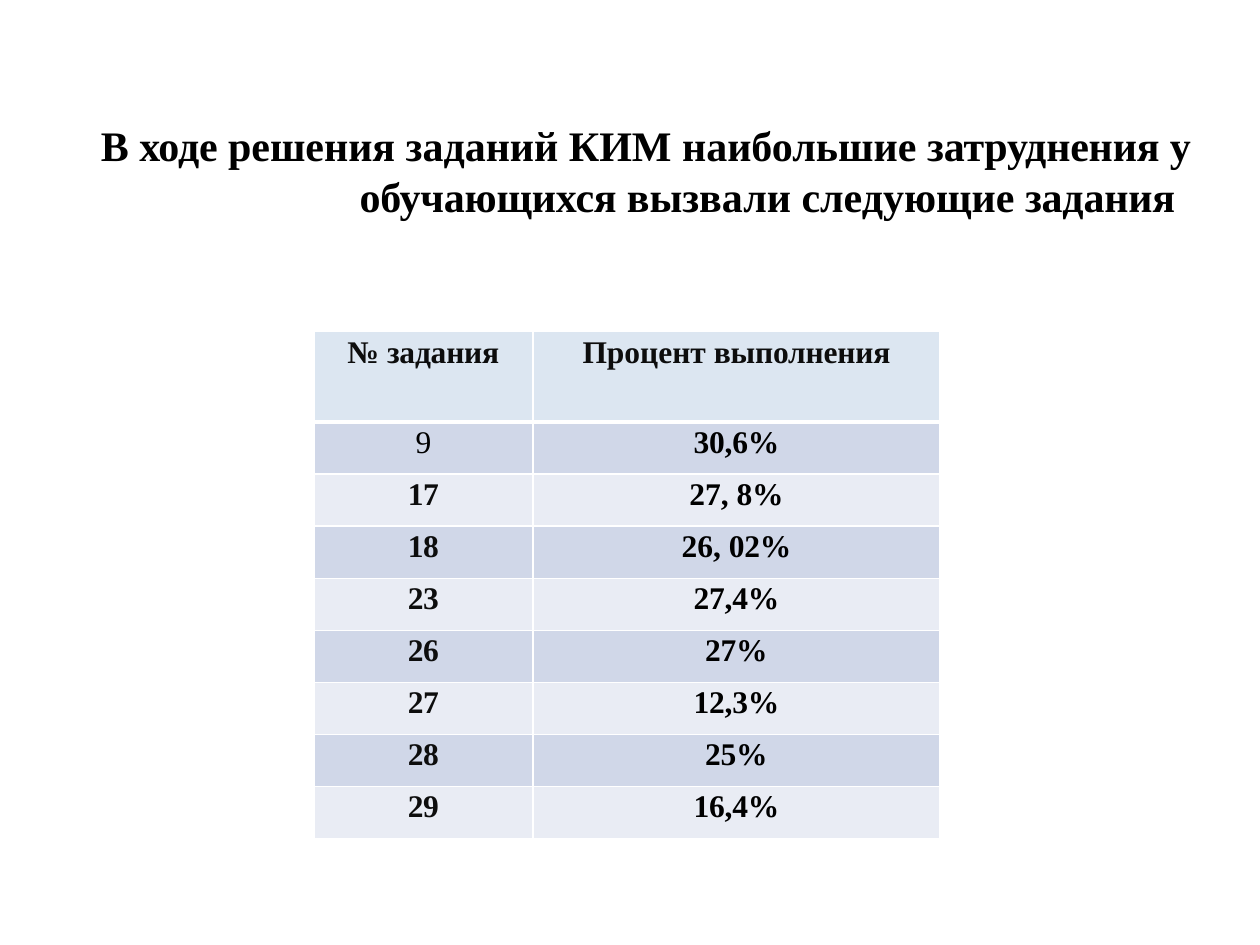
from dataclasses import dataclass

from lxml.etree import SubElement
from pptx import Presentation
from pptx.dml.color import RGBColor as RGB
from pptx.enum.text import MSO_ANCHOR as Anchor, MSO_AUTO_SIZE as AutoSize, PP_ALIGN as Align
from pptx.oxml import parse_xml
from pptx.oxml.ns import nsdecls, qn
from pptx.util import Pt


@dataclass(frozen=True)
class Theme:
    font: str = "Times New Roman"
    title_size: float = 24
    cell_size: float = 18
    black: str = "000000"
    soft_black: str = "0D0D0D"
    header: str = "DCE6F1"
    bands: tuple = ("D0D7E8", "E9ECF4")
    border: str = "FFFFFF"
    thin: float = 1
    thick: float = 3


@dataclass(frozen=True)
class Run:
    text: str
    tracking: float = 0  # points
    bold: bool = True


@dataclass(frozen=True)
class Task:
    number: Run
    percent: tuple


THEME = Theme()

TITLE = (
    Run("В "), Run("ходе ", -0.1), Run("решения заданий КИМ наибольшие "),
    Run("затруднения ", -0.1), Run("у "), Run("обучающихся ", -0.1),
    Run("вызвали следующие "), Run("задания", -0.1),
)
HEADERS = (
    (Run("№ "), Run("задания", -0.1)),
    (Run("Процент "), Run("выполнения", -0.1)),
)
TASKS = (
    Task(Run("9", bold=False), (Run("30,6%", -0.1),)),
    Task(Run("17", -0.2), (Run("27, "), Run("8%", -0.2))),
    Task(Run("18", -0.2), (Run("26, "), Run("02%", -0.2))),
    Task(Run("23", -0.2), (Run("27,4%", -0.1),)),
    Task(Run("26", -0.2), (Run("27%", -0.1),)),
    Task(Run("27", -0.2), (Run("12,3%", -0.1),)),
    Task(Run("28", -0.2), (Run("25%", -0.1),)),
    Task(Run("29", -0.2), (Run("16,4%", -0.1),)),
)

COL_WIDTHS = (125.28, 232.56)
HEADER_HEIGHT, ROW_HEIGHT = 51.84, 29.79


def write(p, runs: tuple, size: float, color: str, before: float) -> None:
    """Fill a centred paragraph run by run."""
    p.alignment = Align.CENTER
    p.space_before = Pt(before)
    for run in runs:
        r = p.add_run()
        r.text = run.text
        r.font.name = THEME.font
        r.font.size = Pt(size)
        r.font.bold = run.bold
        r.font.color.rgb = RGB.from_string(color)
        if run.tracking:
            r.font._element.set("spc", str(round(run.tracking * 100)))


def set_borders(cell, top: float, bottom: float) -> None:
    """Draw the four cell edges, which precede the fill in the XML."""
    tc_pr = cell._tc.get_or_add_tcPr()
    edges = (("L", THEME.thin), ("R", THEME.thin), ("T", top), ("B", bottom))
    for i, (side, width) in enumerate(edges):
        ln = parse_xml(f'<a:ln{side} {nsdecls("a")} w="{Pt(width)}"/>')
        fill = SubElement(ln, qn("a:solidFill"))
        SubElement(fill, qn("a:srgbClr"), val=THEME.border)
        tc_pr.insert(i, ln)


def draw_cell(cell, runs: tuple, color: str, fill: str, before: float,
              top: float, bottom: float) -> None:
    cell.margin_left = cell.margin_right = cell.margin_bottom = Pt(0)
    cell.margin_top = Pt(before * 0.75)
    cell.fill.solid()
    cell.fill.fore_color.rgb = RGB.from_string(fill)
    set_borders(cell, top, bottom)
    write(cell.text_frame.paragraphs[0], runs, THEME.cell_size, color, before)


def draw_title(sp) -> None:
    sp.left, sp.top, sp.width, sp.height = Pt(31.68), Pt(67.68), Pt(673.92), Pt(59.04)
    tf = sp.text_frame
    tf.word_wrap = True
    tf.auto_size = AutoSize.SHAPE_TO_FIT_TEXT
    tf.vertical_anchor = Anchor.TOP
    tf.margin_left = tf.margin_right = tf.margin_bottom = Pt(0)
    tf.margin_top = Pt(0.72)
    p = tf.paragraphs[0]
    write(p, TITLE, THEME.title_size, THEME.black, 0.8)
    # Hanging indent
    p_pr = p._p.get_or_add_pPr()
    p_pr.set("marL", str(Pt(139.68)))
    p_pr.set("indent", str(Pt(-138.96)))


def draw_table(slide) -> None:
    height = HEADER_HEIGHT + ROW_HEIGHT * len(TASKS)
    table = slide.shapes.add_table(
        len(TASKS) + 1, len(COL_WIDTHS), Pt(179.28), Pt(189.36),
        Pt(sum(COL_WIDTHS)), Pt(height)).table
    for col, width in zip(table.columns, COL_WIDTHS):
        col.width = Pt(width)
    for i, row in enumerate(table.rows):
        row.height = Pt(ROW_HEIGHT if i else HEADER_HEIGHT)

    # Header row
    for j, runs in enumerate(HEADERS):
        draw_cell(table.cell(0, j), runs, THEME.soft_black, THEME.header, 2.8,
                  THEME.thin, THEME.thick)

    # Task rows in alternating bands
    for i, task in enumerate(TASKS, start=1):
        top = THEME.thick if i == 1 else THEME.thin
        band = THEME.bands[(i - 1) % 2]
        number_color = THEME.soft_black if task.number.bold else THEME.black
        columns = (((task.number,), number_color), (task.percent, THEME.black))
        for j, (runs, color) in enumerate(columns):
            draw_cell(table.cell(i, j), runs, color, band, 2.2, top, THEME.thin)


def main() -> None:
    prs = Presentation()
    prs.slide_width, prs.slide_height = Pt(720), Pt(540)
    slide = prs.slides.add_slide(prs.slide_layouts[5])
    draw_title(slide.shapes.title)
    draw_table(slide)
    prs.save("out.pptx")


if __name__ == "__main__":
    main()
